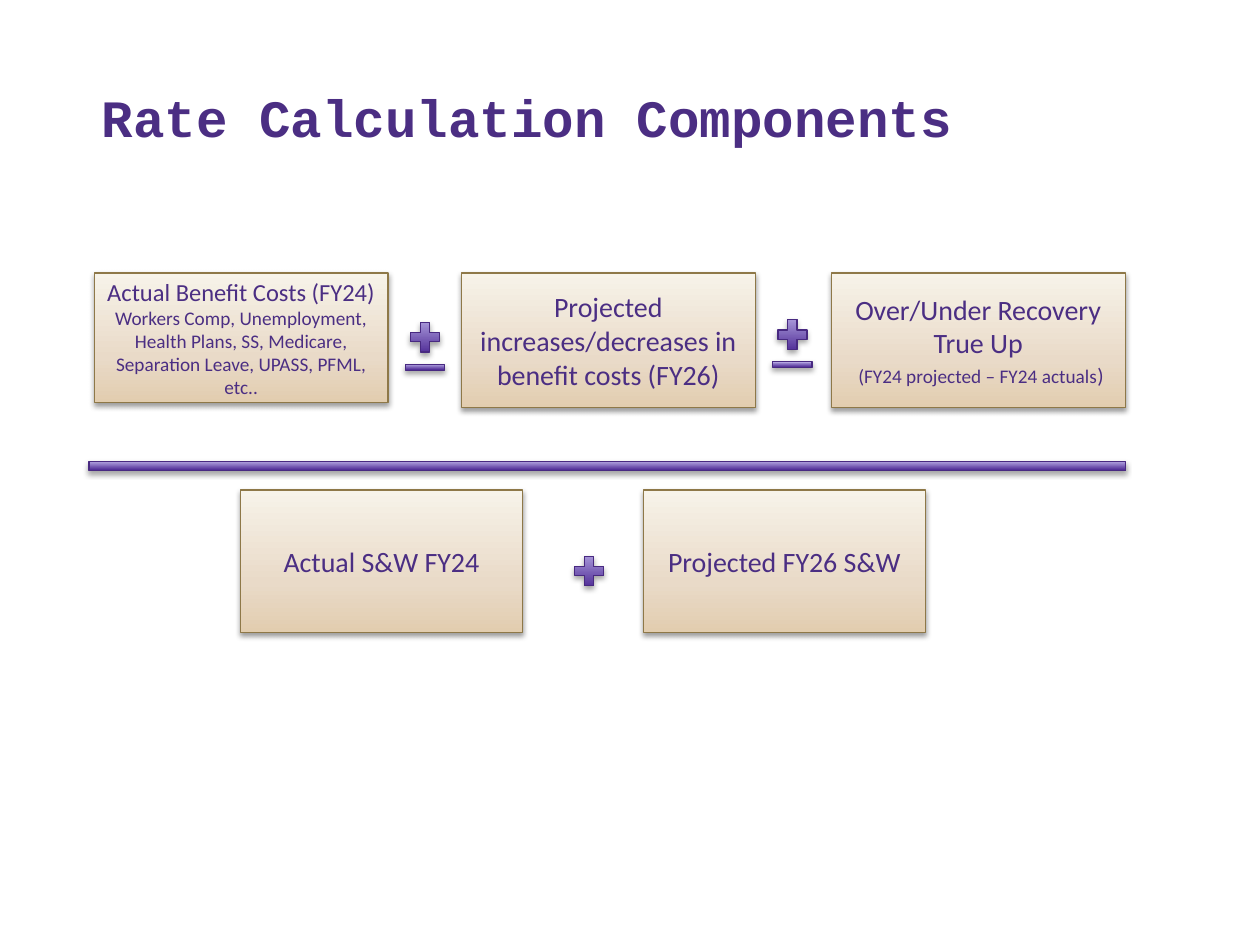
from lxml import etree
from pptx import Presentation
from pptx.dml.color import RGBColor
from pptx.enum import shapes, text
from pptx.oxml import ns
from pptx.util import Pt

HUES = {
    "ink": "4B2E83", "edge": "8E7848", "rim": "482981", "black": "000000",
    "sand": "E2CDAF", "tan": "E9DAC8", "cream": "F7F3E9",
    "plum": "46218F", "lilac": "B4A6E2",
}
TAN = [(0, "sand"), (35, "tan"), (100, "cream")]
PLUM = [(0, "plum"), (100, "lilac")]
RECT = shapes.MSO_SHAPE.RECTANGLE
PLUS = shapes.MSO_SHAPE.MATH_PLUS


class Deck:
    """Draws the styled parts of the rate formula on one slide."""

    def __init__(self, slide, font="Calibri"):
        self.slide = slide
        self.font = font

    def hue(self, name):
        return RGBColor.from_string(HUES[name])

    def tint(self, node, name, alpha=None):
        color = etree.SubElement(node, ns.qn("a:srgbClr"), val=HUES[name])
        if alpha:
            etree.SubElement(color, ns.qn("a:alpha"), val=str(alpha * 1000))

    def form(self, kind, area, stops, rim, alpha, drop):
        form = self.slide.shapes.add_shape(kind, *map(Pt, area))
        form.fill.gradient()
        form.fill.gradient_angle = 90
        form.line.color.rgb = self.hue(rim)
        form.line.width = Pt(0.75)
        form.shadow.inherit = False
        props = form._element.spPr
        ramp = props.find(".//" + ns.qn("a:gsLst"))
        for old in list(ramp):
            ramp.remove(old)
        for place, name in stops:
            stop = etree.SubElement(ramp, ns.qn("a:gs"), pos=str(place * 1000))
            self.tint(stop, name)
        shade = etree.SubElement(
            props.find(ns.qn("a:effectLst")), ns.qn("a:outerShdw"),
            blurRad=str(Pt(3.1)), dist=str(Pt(drop)), dir="5400000", rotWithShape="0")
        self.tint(shade, "black", alpha)
        return form

    def label(self, para, runs, font):
        for words, size in runs:
            run = para.add_run()
            run.text = words
            run.font.size = Pt(size)
        para.font.name = font
        para.font.color.rgb = self.hue("ink")

    def title(self, words, area):
        frame = self.slide.shapes.add_textbox(*map(Pt, area)).text_frame
        frame.word_wrap = True
        frame.vertical_anchor = text.MSO_ANCHOR.BOTTOM
        para = frame.paragraphs[0]
        self.label(para, [(words, 30)], "Courier New")
        para.font.bold = True

    def box(self, area, *lines):
        frame = self.form(RECT, area, TAN, "edge", 38, 1.6).text_frame
        frame.word_wrap = True
        frame.vertical_anchor = text.MSO_ANCHOR.MIDDLE
        for i, runs in enumerate(lines):
            para = frame.add_paragraph() if i else frame.paragraphs[0]
            para.alignment = text.PP_ALIGN.CENTER
            self.label(para, runs, self.font)

    def bar(self, area):
        self.form(RECT, area, PLUM, "rim", 35, 1.8)

    def plus(self, left, top):
        form = self.form(PLUS, (left, top, 22.5, 23), PLUM, "rim", 35, 1.8)
        form.adjustments[0] = 0.235

    def sign(self, left, top):
        self.plus(left, top)
        self.bar((left, top + 27, 22.5, 3.4))


def main():
    show = Presentation()
    show.slide_width, show.slide_height = Pt(720), Pt(540)
    deck = Deck(show.slides.add_slide(show.slide_layouts[6]))

    deck.title("Rate Calculation Components", (51, 38, 652, 50))

    top, wide, high = 156, 168, 77
    deck.box(
        (53.8, top, wide, 74),
        [("Actual Benefit Costs (FY24)", 14)],
        [("Workers Comp, Unemployment, Health Plans, SS, Medicare, "
          "Separation Leave, UPASS, PFML, etc..", 11)])
    deck.sign(231.6, 181.2)
    deck.box(
        (263.6, top, wide, high),
        [("Projected increases/decreases in benefit costs (FY26)", 16)])
    deck.sign(441.6, 179.7)
    deck.box(
        (475, top, wide, high),
        [("Over/Under Recovery True Up", 16)],
        [(" ", 14), ("(FY24 projected – FY24 actuals", 11), (")", 12)])

    deck.bar((50.8, 263.6, 592.4, 5.4))

    for left, words in ((137.5, "Actual S&W FY24"), (367.7, "Projected FY26 S&W")):
        deck.box((left, 280, 161, 81.5), [(words, 16)])
    deck.plus(325.4, 314.8)

    show.save("out.pptx")


if __name__ == "__main__":
    main()
